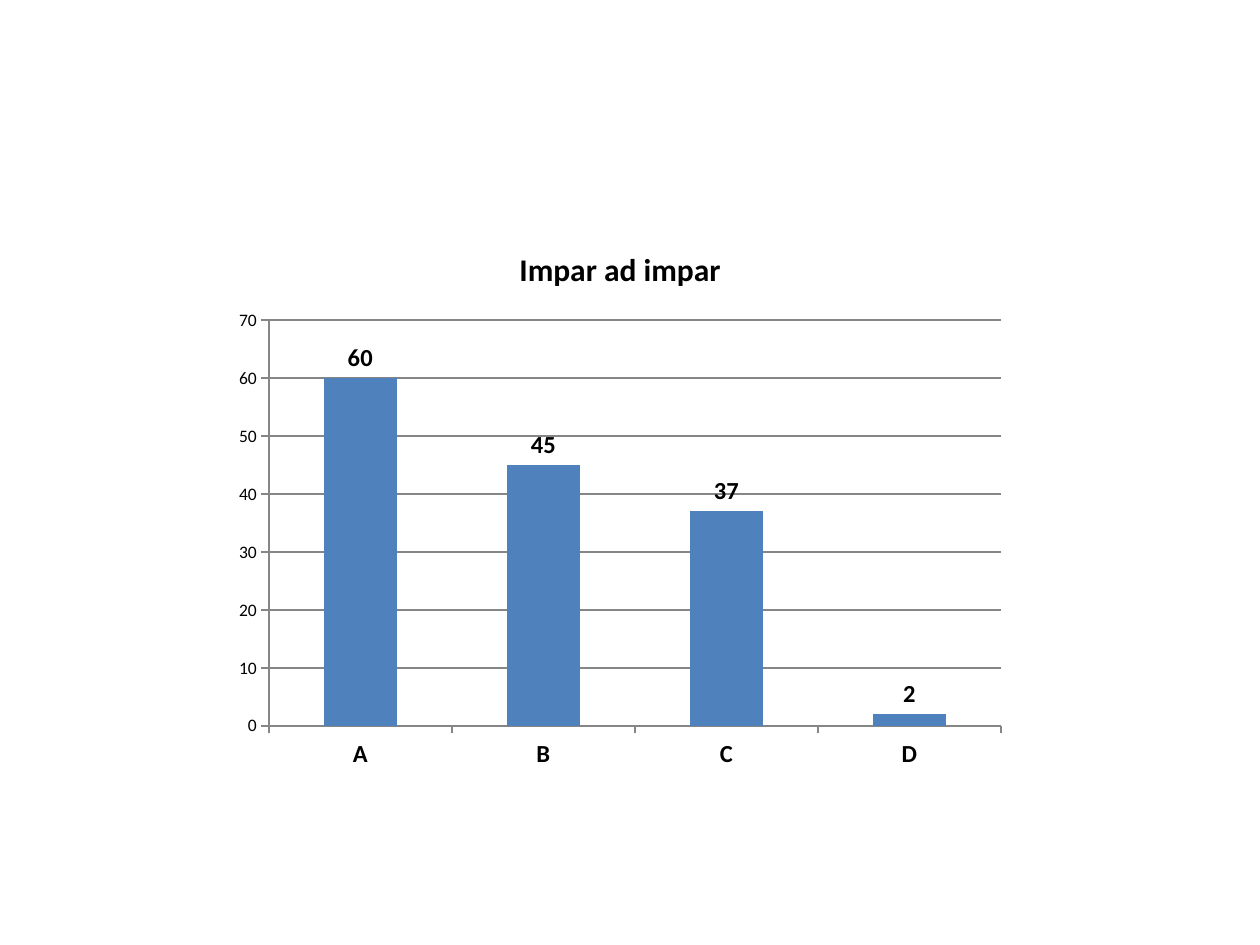
from dataclasses import dataclass

from pptx import Presentation
from pptx.chart.data import CategoryChartData
from pptx.dml.color import RGBColor
from pptx.enum.chart import XL_CHART_TYPE as ChartType
from pptx.enum.chart import XL_LABEL_POSITION as LabelPos
from pptx.enum.chart import XL_TICK_MARK as Tick
from pptx.util import Cm, Pt


@dataclass(frozen=True)
class Theme:
    font: str = "Calibri"
    text: RGBColor = RGBColor(0x00, 0x00, 0x00)
    bar: RGBColor = RGBColor(0x4F, 0x81, 0xBD)
    line: RGBColor = RGBColor(0x86, 0x86, 0x86)
    title_size: Pt = Pt(18)
    label_size: Pt = Pt(14)
    base_size: Pt = Pt(10)


theme = Theme()


def style_font(font, size, bold):
    font.name = theme.font
    font.size = size
    font.bold = bold
    font.color.rgb = theme.text


prs = Presentation()
prs.slide_width, prs.slide_height = Cm(25.4), Cm(19.05)
s = prs.slides.add_slide(prs.slide_layouts[6])

data = CategoryChartData()
data.categories = ["A", "B", "C", "D"]
data.add_series("Impar ad impar", [60, 45, 37, 2])
chart = s.shapes.add_chart(
    ChartType.COLUMN_CLUSTERED, Cm(4.5), Cm(4.52), Cm(16), Cm(11.2), data
).chart
style_font(chart.font, theme.base_size, False)
chart.has_legend = False

# Title
chart.has_title = True
tf = chart.chart_title.text_frame
tf.text = "Impar ad impar"
style_font(tf.paragraphs[0].runs[0].font, theme.title_size, True)
chart.chart_title.include_in_layout = False

# Axes
for axis in (chart.category_axis, chart.value_axis):
    axis.major_tick_mark = Tick.OUTSIDE
    axis.minor_tick_mark = Tick.NONE
    axis.format.line.color.rgb = theme.line
    axis.format.line.width = Pt(0.75)
style_font(chart.category_axis.tick_labels.font, theme.label_size, True)
style_font(chart.value_axis.tick_labels.font, theme.base_size, False)
chart.value_axis.minimum_scale = 0
chart.value_axis.maximum_scale = 70
chart.value_axis.major_unit = 10
chart.value_axis.has_major_gridlines = True
grid_line = chart.value_axis.major_gridlines.format.line
grid_line.color.rgb = theme.line
grid_line.width = Pt(0.75)

# Bars and their values
plot = chart.plots[0]
plot.gap_width = 150
plot.vary_by_categories = False
series = plot.series[0]
series.invert_if_negative = False
series.format.fill.solid()
series.format.fill.fore_color.rgb = theme.bar
labels = series.data_labels
labels.show_value = True
labels.position = LabelPos.OUTSIDE_END
style_font(labels.font, theme.label_size, True)

prs.save("out.pptx")
